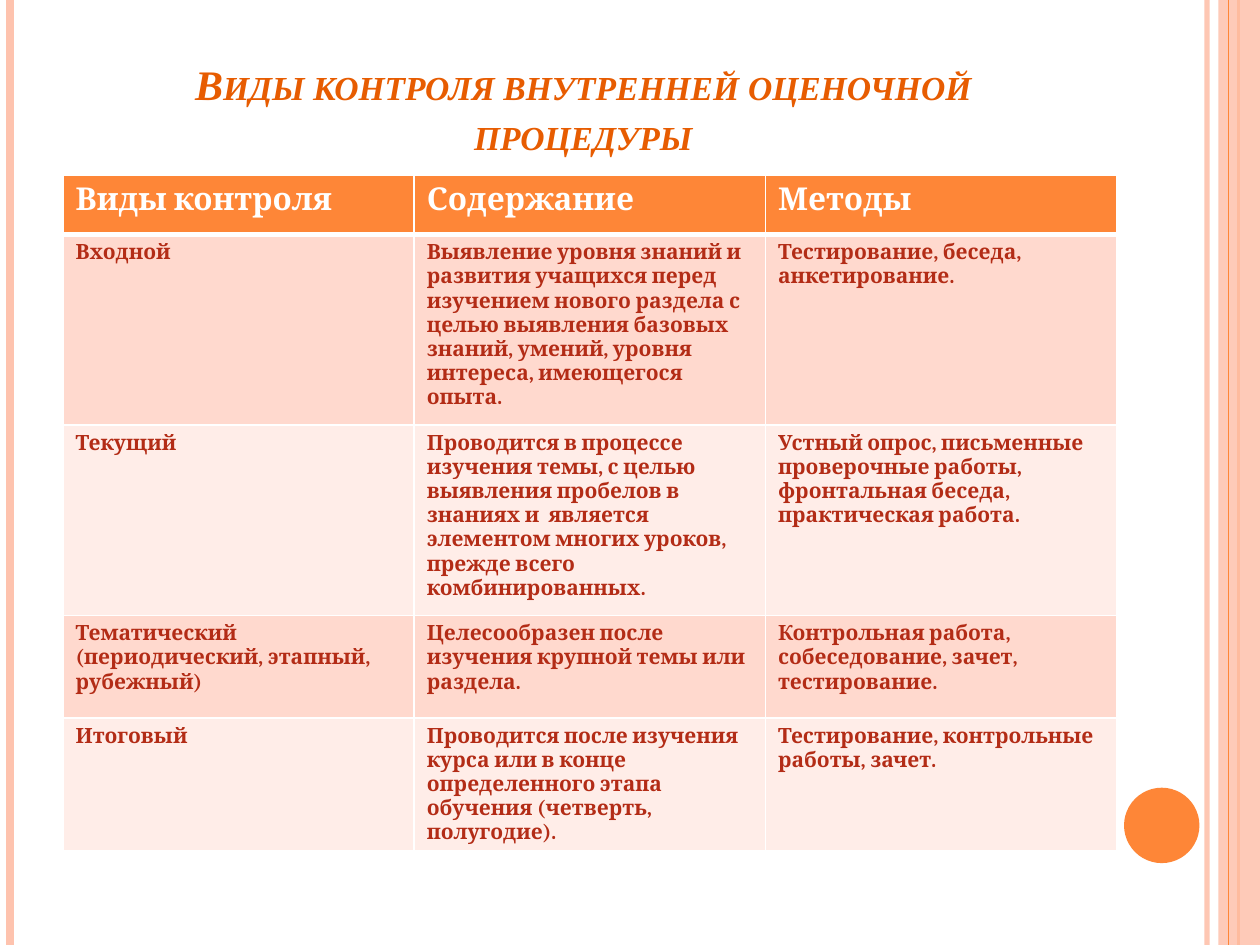
from lxml.etree import SubElement
from pptx import Presentation
from pptx.dml.color import RGBColor
from pptx.enum.shapes import MSO_CONNECTOR as Connector, MSO_SHAPE as Shape
from pptx.enum.text import MSO_ANCHOR as Anchor, MSO_AUTO_SIZE as AutoSize, PP_ALIGN as Align
from pptx.oxml.ns import qn
from pptx.util import Cm, Pt

ORANGE = RGBColor(0xFE, 0x86, 0x37)
PEACH = RGBColor(0xFE, 0xC3, 0xAE)
TITLE_COLOR = RGBColor(0xE7, 0x5C, 0x01)
BRICK = RGBColor(0xB3, 0x2C, 0x16)
WHITE = RGBColor(0xFF, 0xFF, 0xFF)
BANDS = [RGBColor(0xFF, 0xD9, 0xCE), RGBColor(0xFF, 0xED, 0xE8)]

TITLE = "Виды контроля внутренней оценочной процедуры"
ROWS = [
    ("Виды контроля", "Содержание", "Методы"),
    ("Входной",
     "Выявление уровня знаний и развития учащихся перед изучением нового раздела "
     "с целью выявления базовых знаний, умений, уровня интереса, имеющегося опыта.",
     "Тестирование, беседа, анкетирование."),
    ("Текущий",
     "Проводится в процессе изучения темы, с целью выявления пробелов в знаниях "
     "и  является элементом многих уроков, прежде всего комбинированных.",
     "Устный опрос, письменные проверочные работы, фронтальная беседа, "
     "практическая работа."),
    ("Тематический (периодический, этапный, рубежный)",
     "Целесообразен после изучения крупной темы или раздела.",
     "Контрольная работа, собеседование, зачет, тестирование."),
    ("Итоговый",
     "Проводится после изучения курса или в конце определенного этапа обучения "
     "(четверть, полугодие).",
     "Тестирование, контрольные работы, зачет."),
]
ROW_HEIGHTS = [1.19, 3.84, 3.84, 2.06, 2.67]
COLUMN_WIDTH = 7.08
PAGE_WIDTH, PAGE_HEIGHT = 25.4, 19.05

BACK_STRIPES = [(24.33, 3, PEACH, 93), (0.2, 4.5, PEACH, 100), (24.97, 1.5, ORANGE, 100)]
FRONT_STRIPES = [(24.77, 0.75, ORANGE, 100)]
BAND_LEFT = 24.56


def set_alpha(element, percent):
    color = next(element.iter(qn("a:srgbClr")))
    SubElement(color, qn("a:alpha"), val=str(percent * 1000))


def add_stripes(page, stripes):
    for x, width, color, alpha in stripes:
        stripe = page.shapes.add_connector(
            Connector.STRAIGHT, Cm(x), Cm(0), Cm(x), Cm(PAGE_HEIGHT))
        stripe.line.color.rgb = color
        stripe.line.width = Pt(width)
        SubElement(stripe._element.spPr, qn("a:effectLst"))
        if alpha < 100:
            set_alpha(stripe._element.spPr, alpha)


def add_plain_shape(page, kind, left, top, width, height, color):
    shape = page.shapes.add_shape(kind, Cm(left), Cm(top), Cm(width), Cm(height))
    shape.shadow.inherit = False
    shape.fill.solid()
    shape.fill.fore_color.rgb = color
    shape.line.fill.background()
    return shape


def add_span(para, text, font_name, size, color):
    span = para.add_run()
    span.text = text
    span.font.name = font_name
    span.font.size = Pt(size)
    span.font.bold = True
    span.font.color.rgb = color
    return span


def add_title(page):
    box = page.shapes.title
    box.left, box.top, box.width, box.height = Cm(1.5), Cm(0.76), Cm(20.52), Cm(2.57)
    frame = box.text_frame
    frame.word_wrap = True
    frame.auto_size = AutoSize.NONE
    frame.vertical_anchor = Anchor.BOTTOM
    para = frame.paragraphs[0]
    para.alignment = Align.CENTER
    span = add_span(para, TITLE, "Times New Roman", 24, TITLE_COLOR)
    span.font.italic = True
    span._r.get_or_add_rPr().set("cap", "small")


def set_borders(cell, widths):
    properties = cell._tc.get_or_add_tcPr()
    for side, width in widths.items():
        line = SubElement(properties, qn(f"a:ln{side}"), w=str(Pt(width)))
        fill = SubElement(line, qn("a:solidFill"))
        SubElement(fill, qn("a:srgbClr"), val=str(WHITE))


def add_control_table(page):
    columns = len(ROWS[0])
    table = page.shapes.add_table(
        len(ROWS), columns, Cm(1.27), Cm(3.54),
        Cm(COLUMN_WIDTH * columns), Cm(sum(ROW_HEIGHTS))).table
    for column in table.columns:
        column.width = Cm(COLUMN_WIDTH)
    for i, (texts, height) in enumerate(zip(ROWS, ROW_HEIGHTS)):
        table.rows[i].height = Cm(height)
        header = i == 0
        size, color = (18, WHITE) if header else (12, BRICK)
        borders = {"L": 1, "R": 1, "T": 3 if i == 1 else 1, "B": 3 if header else 1}
        for j, text in enumerate(texts):
            cell = table.cell(i, j)
            set_borders(cell, borders)
            cell.fill.solid()
            cell.fill.fore_color.rgb = ORANGE if header else BANDS[(i - 1) % 2]
            add_span(cell.text_frame.paragraphs[0], text, "Cambria", size, color)


def main():
    deck = Presentation()
    deck.slide_width, deck.slide_height = Cm(PAGE_WIDTH), Cm(PAGE_HEIGHT)
    page = deck.slides.add_slide(deck.slide_layouts[5])
    add_stripes(page, BACK_STRIPES)
    band = add_plain_shape(
        page, Shape.RECTANGLE, BAND_LEFT, 0, PAGE_WIDTH - BAND_LEFT, PAGE_HEIGHT, PEACH)
    set_alpha(band._element.spPr, 87)
    add_stripes(page, FRONT_STRIPES)
    add_plain_shape(page, Shape.OVAL, 22.66, 15.88, 1.52, 1.52, ORANGE)
    add_title(page)
    add_control_table(page)
    deck.save("out.pptx")


if __name__ == "__main__":
    main()
